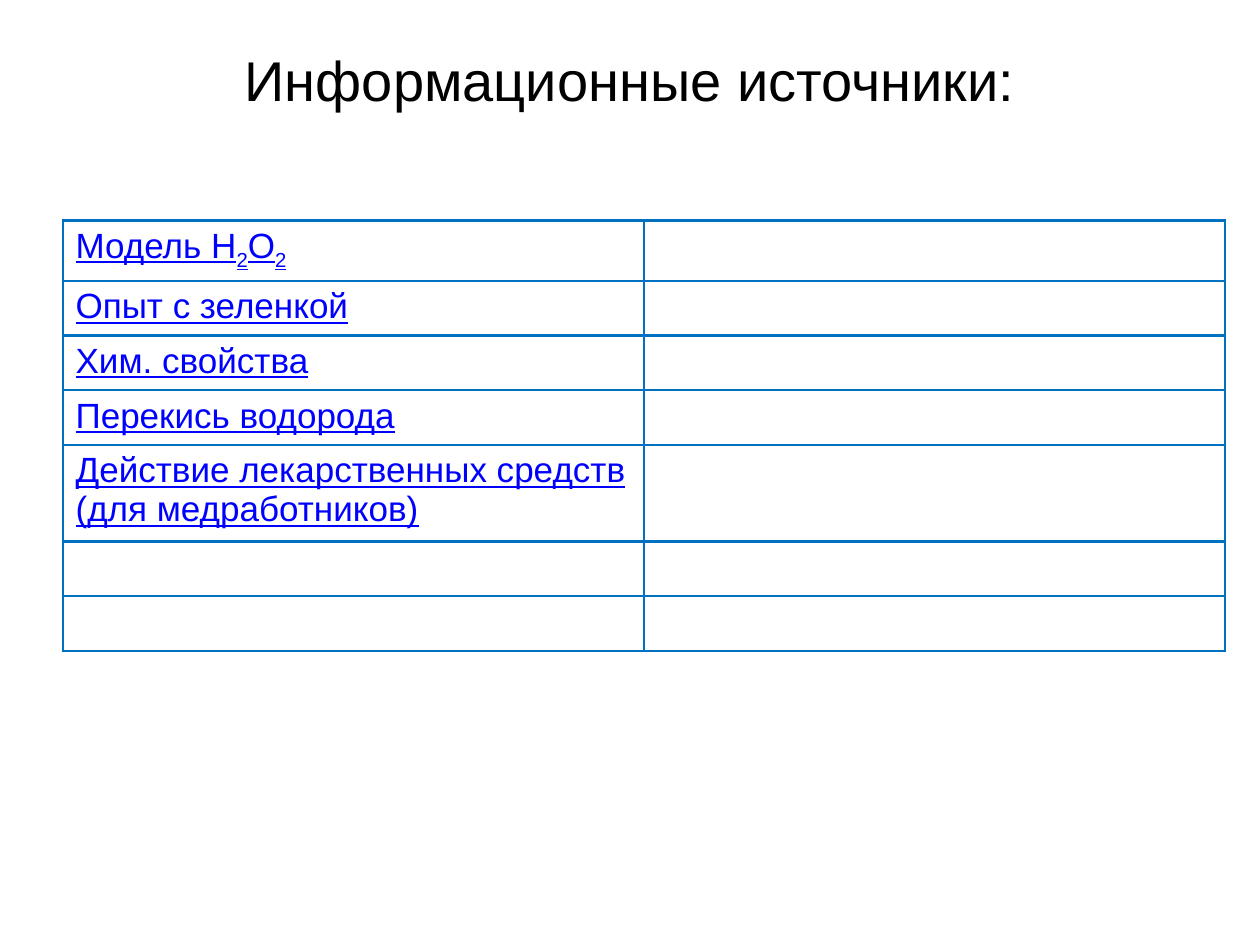
from pptx import Presentation
from pptx.dml.color import RGBColor
from pptx.enum import text
from pptx.oxml import parse_xml
from pptx.oxml import ns
from pptx.util import Inches, Pt

COLORS = {"title": "000000", "link": "0000FF", "border": "0070C0"}
FONT = "Arial"
SOURCES = [
    [("Модель H", 0), ("2", -25), ("O", 0), ("2", -25)],
    [("Опыт с зеленкой", 0)],
    [("Хим. свойства", 0)],
    [("Перекись водорода", 0)],
    [("Действие лекарственных средств (для медработников)", 0)],
    [],
    [],
]


def add_run(paragraph, words, size, color, underline=False, baseline=0):
    """Add one styled run, lowered or raised by a baseline percentage."""
    run = paragraph.add_run()
    run.text = words
    run.font.name = FONT
    run.font.size = Pt(size)
    run.font.underline = underline
    run.font.color.rgb = RGBColor.from_string(COLORS[color])
    if baseline:
        run.font._element.set("baseline", str(baseline * 1000))


def set_borders(cell, color, width):
    """Draw the four edges of a table cell and leave it unfilled."""
    properties = cell._tc.get_or_add_tcPr()
    for edge in ("lnL", "lnR", "lnT", "lnB"):
        properties.append(parse_xml(
            f'<a:{edge} {ns.nsdecls("a")} w="{Pt(width)}"><a:solidFill>'
            f'<a:srgbClr val="{COLORS[color]}"/></a:solidFill></a:{edge}>'))
    cell.fill.background()


def add_title(slide, left, top, width, height):
    """Place the centred heading in its box."""
    frame = slide.shapes.add_textbox(left, top, width, height).text_frame
    frame.word_wrap = True
    frame.vertical_anchor = text.MSO_ANCHOR.MIDDLE
    paragraph = frame.paragraphs[0]
    paragraph.alignment = text.PP_ALIGN.CENTER
    add_run(paragraph, "Информационные источники:", 32, "title")


def add_sources(slide, left, top, width, row_height):
    """Place the two-column table of sources."""
    count = len(SOURCES)
    table = slide.shapes.add_table(
        count, 2, left, top, width, row_height * count).table
    table.first_row = False
    table.horz_banding = False
    for row, runs in zip(table.rows, SOURCES):
        row.height = row_height
        for cell in row.cells:
            set_borders(cell, "border", 1.5)
            cell.text_frame.paragraphs[0].font.size = Pt(20)
        for words, baseline in runs:
            add_run(row.cells[0].text_frame.paragraphs[0], words, 20, "link",
                    underline=True, baseline=baseline)


def main():
    """Build the slide of information sources."""
    presentation = Presentation()
    presentation.slide_width = Inches(10)
    presentation.slide_height = Inches(7.5)
    slide = presentation.slides.add_slide(presentation.slide_layouts[6])
    add_title(slide, Inches(0.5), Inches(0.3), Inches(9), Inches(0.65))
    add_sources(slide, Inches(0.5), Inches(1.75), Inches(9.22), Inches(0.41))
    presentation.save("out.pptx")


if __name__ == "__main__":
    main()
